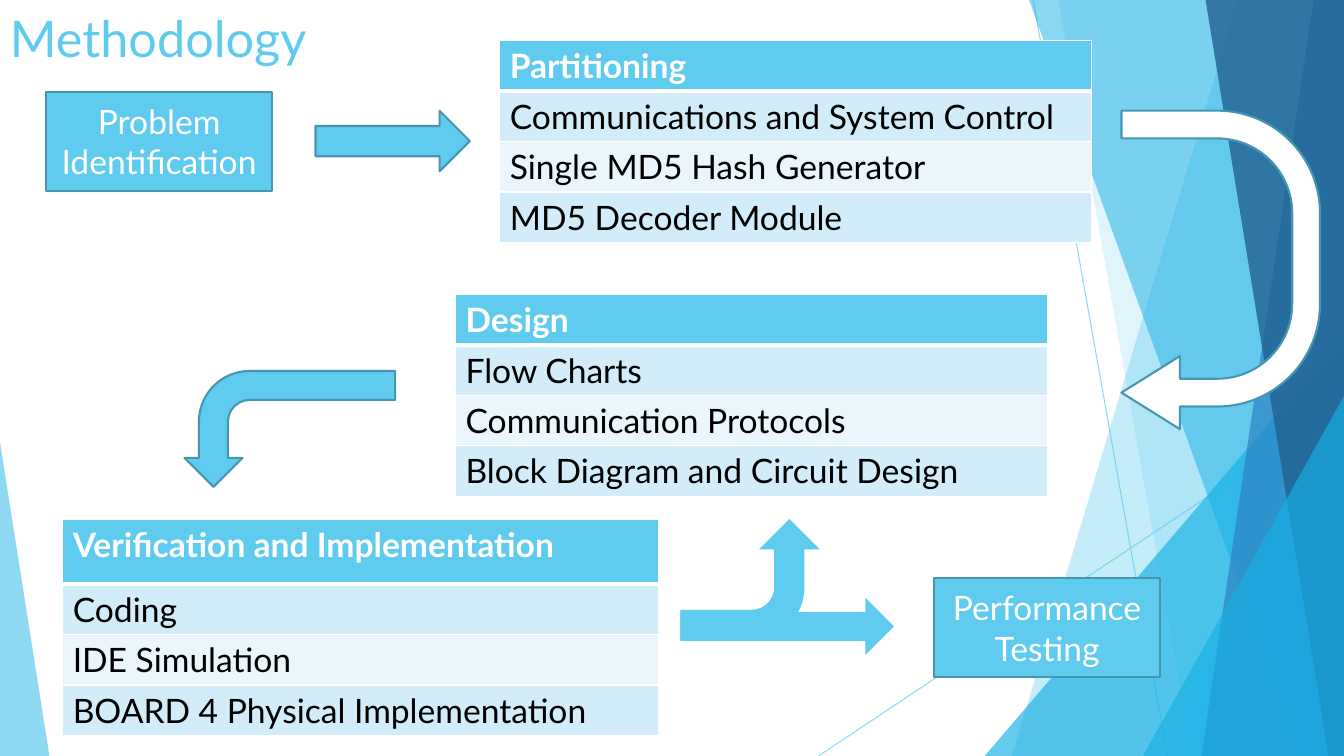
"""Build the Methodology slide: a flow of boxes, tables and arrows on a faceted background."""
import dataclasses

import lxml.etree
import pptx
import pptx.dml.color
import pptx.enum.shapes
import pptx.enum.text
import pptx.oxml.ns
import pptx.util

Pt = pptx.util.Pt
MSO = pptx.enum.shapes.MSO_SHAPE
SubElement = lxml.etree.SubElement
qn = pptx.oxml.ns.qn
rgb = pptx.dml.color.RGBColor.from_string


@dataclasses.dataclass(frozen=True)
class Theme:
    font: str = "Lato"
    title_size: int = 36
    body_size: int = 24
    sky: str = "5FCBEF"
    cyan: str = "17B0E4"
    blue: str = "2E83C3"
    navy: str = "226292"
    edge: str = "4696B1"
    band_dark: str = "D2ECF9"
    band_light: str = "EAF6FC"
    white: str = "FFFFFF"
    black: str = "000000"


theme = Theme()


def paint(sp, fill, line=None):
    sp.shadow.inherit = False
    sp.fill.solid()
    sp.fill.fore_color.rgb = rgb(fill)
    if line:
        sp.line.color.rgb = rgb(line)
        sp.line.width = Pt(1.5)
    else:
        sp.line.fill.background()


def style(p, color, size=theme.body_size, bold=False):
    p.font.name = theme.font
    p.font.size = Pt(size)
    p.font.bold = bold
    p.font.color.rgb = rgb(color)


prs = pptx.Presentation()
prs.slide_width, prs.slide_height = Pt(960), Pt(540)
s = prs.slides.add_slide(prs.slide_layouts[6])
translucent = []

for ends in [(738, 0, 834, 540), (960, 290, 584.6, 540)]:
    rule = s.shapes.add_connector(
        pptx.enum.shapes.MSO_CONNECTOR.STRAIGHT, *[Pt(v) for v in ends])
    rule.line.color.rgb = rgb(theme.sky)
    rule.line.width = Pt(0.75)
    SubElement(rule._element.spPr, qn("a:effectLst"))
    translucent.append((rule, 70))

facets = [
    ("band", (884.2, 722.9), theme.sky, 36),
    ("band", (756, 851.8), theme.sky, 20),
    ("triangle", (703.4, 239.8, 256.6, 300.2, 1), theme.cyan, 66),
    ("band", (735.1, 929.5), theme.cyan, 50),
    ("band", (938.2, 858.2), theme.blue, 70),
    ("band", (861.1, 949), theme.navy, 80),
    ("triangle", (816.5, 283, 143.5, 257, 1), theme.cyan, 66),
    ("triangle", (0, 316, 35.3, 224, 0), theme.sky, 70),
]
for kind, geometry, fill, opacity in facets:
    if kind == "band":
        top_x, bottom_x = geometry
        outline = s.shapes.build_freeform(Pt(top_x), Pt(0))
        outline.add_line_segments(
            [(Pt(960), Pt(0)), (Pt(960), Pt(540)), (Pt(bottom_x), Pt(540))])
        sp = outline.convert_to_shape()
    else:
        *box, apex = geometry
        sp = s.shapes.add_shape(MSO.ISOSCELES_TRIANGLE, *[Pt(v) for v in box])
        sp.adjustments[0] = apex
    paint(sp, fill)
    translucent.append((sp, opacity))

for sp, opacity in translucent:
    color = sp._element.spPr.find(".//" + qn("a:srgbClr"))
    SubElement(color, qn("a:alpha"), val=str(opacity * 1000))

for left, top, lines in [(33, 65.6, ["Problem Identification"]),
                         (667.3, 413, ["Performance", "Testing"])]:
    sp = s.shapes.add_shape(MSO.RECTANGLE, Pt(left), Pt(top), Pt(161.3), Pt(70.6))
    paint(sp, theme.sky, theme.edge)
    tf = sp.text_frame
    tf.word_wrap = True
    tf.vertical_anchor = pptx.enum.text.MSO_ANCHOR.MIDDLE
    tf.text = "\n".join(lines)
    for p in tf.paragraphs:
        p.alignment = pptx.enum.text.PP_ALIGN.CENTER
        style(p, theme.white)

arrows = [
    (MSO.RIGHT_ARROW, (225.4, 79.2, 110.2, 43.2), 0, False, theme.sky, theme.edge, []),
    (MSO.U_TURN_ARROW, (758.2, 121.9, 227.5, 141.8), 90, False, theme.white, theme.edge,
     [0.14, 0.184, 0.294, 0.517, 1]),
    (MSO.BENT_ARROW, (165.6, 231.1, 82.8, 150.5), 90, True, theme.sky, theme.edge, []),
    (MSO.BENT_ARROW, (492.5, 364.3, 86.4, 99.4), 270, True, theme.sky, None, []),
    (MSO.RIGHT_ARROW, (486, 427, 152.6, 41), 0, False, theme.sky, None, []),
]
for preset, box, rotation, flipped, fill, line, adjustments in arrows:
    sp = s.shapes.add_shape(preset, *[Pt(v) for v in box])
    sp.rotation = rotation
    if flipped:
        sp._element.spPr.xfrm.set("flipV", "1")
    for i, value in enumerate(adjustments):
        sp.adjustments[i] = value
    paint(sp, fill, line)

tables = [
    (357, 29, 422.6, 36, ["Partitioning", "Communications and System Control",
                          "Single MD5 Hash Generator", "MD5 Decoder Module"]),
    (325.4, 210.3, 422.6, 36, ["Design", "Flow Charts", "Communication Protocols",
                               "Block Diagram and Circuit Design"]),
    (44.8, 371.2, 425.5, 46.1, ["Verification and Implementation", "Coding",
                                "IDE Simulation", "BOARD 4 Physical Implementation"]),
]
for left, top, width, header_height, entries in tables:
    table = s.shapes.add_table(
        len(entries), 1, Pt(left), Pt(top), Pt(width), Pt(header_height + 108)).table
    for i, entry in enumerate(entries):
        table.rows[i].height = Pt(36 if i else header_height)
        cell = table.cell(i, 0)
        cell.text = entry
        cell.fill.solid()
        band = theme.band_dark if i % 2 else theme.band_light
        cell.fill.fore_color.rgb = rgb(band if i else theme.sky)
        style(cell.text_frame.paragraphs[0], theme.black if i else theme.white, bold=i == 0)
    tcPr = table.cell(0, 0)._tc.tcPr
    border = SubElement(tcPr, qn("a:lnB"), w=str(Pt(3)))
    SubElement(SubElement(border, qn("a:solidFill")), qn("a:srgbClr"), val=theme.white)
    tcPr.insert(0, border)

title = s.shapes.add_textbox(Pt(0), Pt(1.4), Pt(676.8), Pt(103.7))
tf = title.text_frame
tf.word_wrap = True
tf.text = "Methodology"
style(tf.paragraphs[0], theme.sky, theme.title_size)

prs.save("out.pptx")
